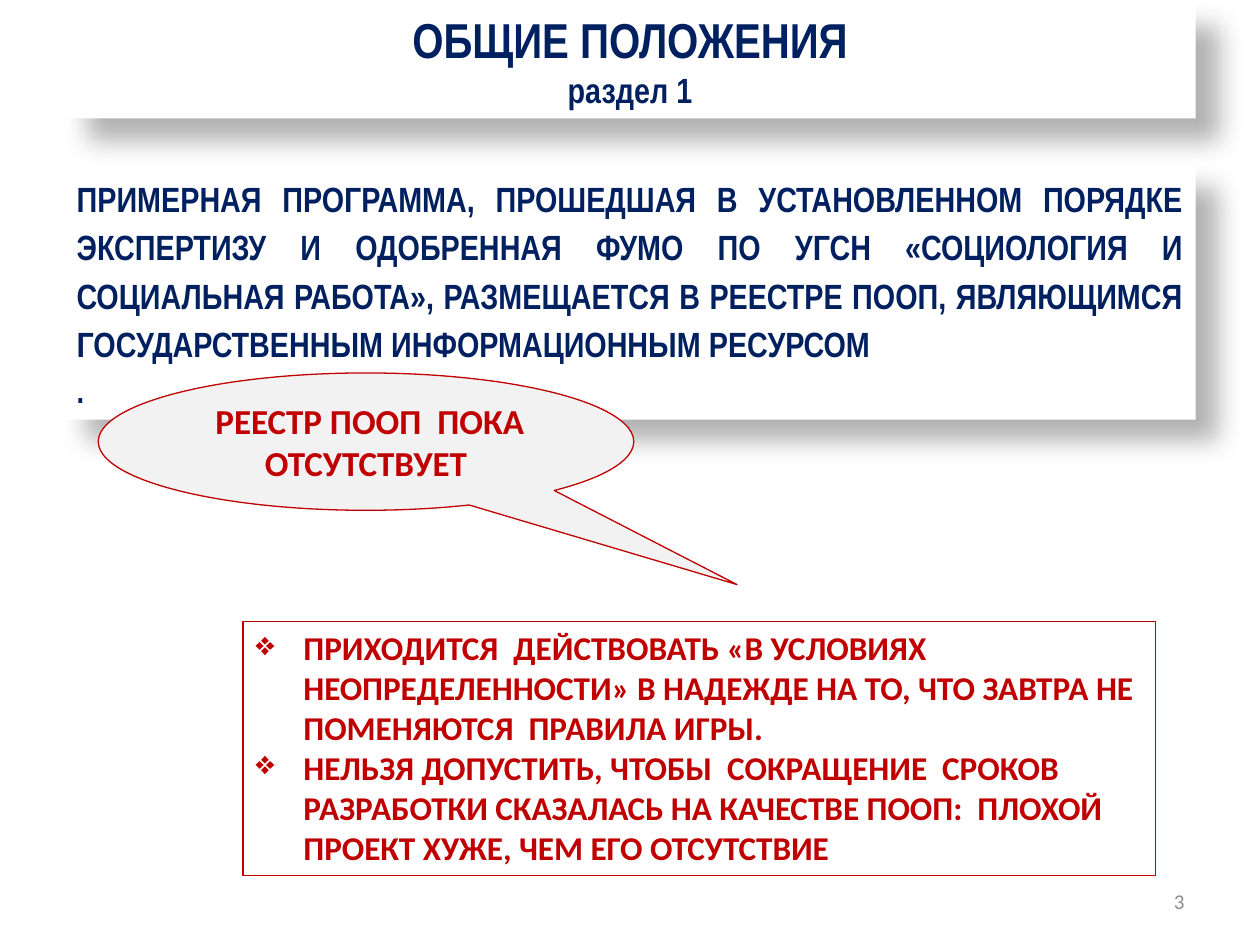
from lxml import etree
from pptx import Presentation
from pptx.dml.color import RGBColor
from pptx.enum import shapes, text
from pptx.oxml.ns import qn
from pptx.util import Inches, Pt

NAVY = RGBColor(0x00, 0x20, 0x60)
RED = RGBColor(0xC0, 0x00, 0x00)
GRAY = RGBColor(0x8C, 0x8C, 0x8C)
PALE = RGBColor(0xF2, 0xF2, 0xF2)
WHITE = RGBColor(0xFF, 0xFF, 0xFF)

KIND = shapes.MSO_SHAPE
ALIGN = text.PP_ALIGN
ANCHOR = text.MSO_ANCHOR

prs = Presentation()
prs.slide_width, prs.slide_height = Inches(10), Inches(7.5)
slide = prs.slides.add_slide(prs.slide_layouts[6])


def add_box(kind, place, fill, line=None):
    box = slide.shapes.add_shape(kind, *[Inches(n) for n in place])
    box.shadow.inherit = False
    box.fill.solid()
    box.fill.fore_color.rgb = fill
    if line is None:
        box.line.fill.background()
    else:
        box.line.color.rgb = line
        box.line.width = Pt(0.75)
    return box


def set_text(box, lines, sizes, font, color, align, bold=True, anchor=ANCHOR.TOP):
    frame = box.text_frame
    frame.word_wrap = True
    frame.vertical_anchor = anchor
    frame.text = "\n".join(lines)
    for par, size in zip(frame.paragraphs, sizes):
        par.alignment = align
        for run in par.runs:
            run.font.name = font
            run.font.size = Pt(size)
            run.font.bold = bold
            run.font.color.rgb = color
    return frame.paragraphs


# Slide number
num = slide.shapes.add_textbox(Inches(7.17), Inches(6.95), Inches(2.33), Inches(0.4))
set_text(num, ["3"], [12], "Calibri", GRAY, ALIGN.RIGHT, False, ANCHOR.MIDDLE)

# Title and statement panels
title = add_box(KIND.RECTANGLE, (0.51, 0.03, 8.98, 0.91), WHITE)
set_text(title, ["ОБЩИЕ ПОЛОЖЕНИЯ", "раздел 1"], [28, 20],
         "Arial Narrow", NAVY, ALIGN.CENTER)

body = add_box(KIND.RECTANGLE, (0.51, 1.31, 8.98, 2.02), WHITE)
pars = set_text(body, [
    "ПРИМЕРНАЯ ПРОГРАММА, ПРОШЕДШАЯ В УСТАНОВЛЕННОМ ПОРЯДКЕ ЭКСПЕРТИЗУ "
    "И ОДОБРЕННАЯ ФУМО ПО УГСН «СОЦИОЛОГИЯ И СОЦИАЛЬНАЯ РАБОТА», "
    "РАЗМЕЩАЕТСЯ В РЕЕСТРЕ ПООП, ЯВЛЯЮЩИМСЯ ГОСУДАРСТВЕННЫМ "
    "ИНФОРМАЦИОННЫМ РЕСУРСОМ",
    ". "], [20, 19], "Arial Narrow", NAVY, ALIGN.JUSTIFY)
for par in pars:
    par.line_spacing = 1.15

# Soft shadow under both panels
for panel in (title, body):
    list_el = panel._element.spPr.find(qn("a:effectLst"))
    shade = etree.SubElement(list_el, qn("a:outerShdw"), blurRad=str(Pt(15)),
                             dist=str(Pt(18)), dir=str(45 * 60000),
                             algn="tl", rotWithShape="0")
    tint = etree.SubElement(shade, qn("a:srgbClr"), val="000000")
    etree.SubElement(tint, qn("a:alpha"), val="30000")

# Callout
call = add_box(KIND.OVAL_CALLOUT, (0.78, 2.96, 4.25, 1.09), PALE, RED)
call.adjustments[0] = 0.693
call.adjustments[1] = 1.041
set_text(call, [" РЕЕСТР ПООП  ПОКА ОТСУТСТВУЕТ"], [20],
         "Calibri", RED, ALIGN.CENTER, anchor=ANCHOR.MIDDLE)

# Bulleted conclusions
notes = add_box(KIND.RECTANGLE, (1.93, 4.93, 7.24, 2.02), WHITE, RED)
pars = set_text(notes, [
    "ПРИХОДИТСЯ  ДЕЙСТВОВАТЬ «В УСЛОВИЯХ НЕОПРЕДЕЛЕННОСТИ» "
    "В НАДЕЖДЕ НА ТО, ЧТО ЗАВТРА НЕ ПОМЕНЯЮТСЯ  ПРАВИЛА ИГРЫ.",
    "НЕЛЬЗЯ ДОПУСТИТЬ, ЧТОБЫ  СОКРАЩЕНИЕ  СРОКОВ РАЗРАБОТКИ "
    "СКАЗАЛАСЬ НА КАЧЕСТВЕ ПООП:  ПЛОХОЙ ПРОЕКТ ХУЖЕ, ЧЕМ ЕГО ОТСУТСТВИЕ",
], [19, 19], "Calibri", RED, ALIGN.LEFT)
for par in pars:
    props = par._p.get_or_add_pPr()
    props.set("marL", str(Inches(0.38)))
    props.set("indent", str(-Inches(0.38)))
    etree.SubElement(props, qn("a:buChar"), char="❖")

prs.save("out.pptx")
